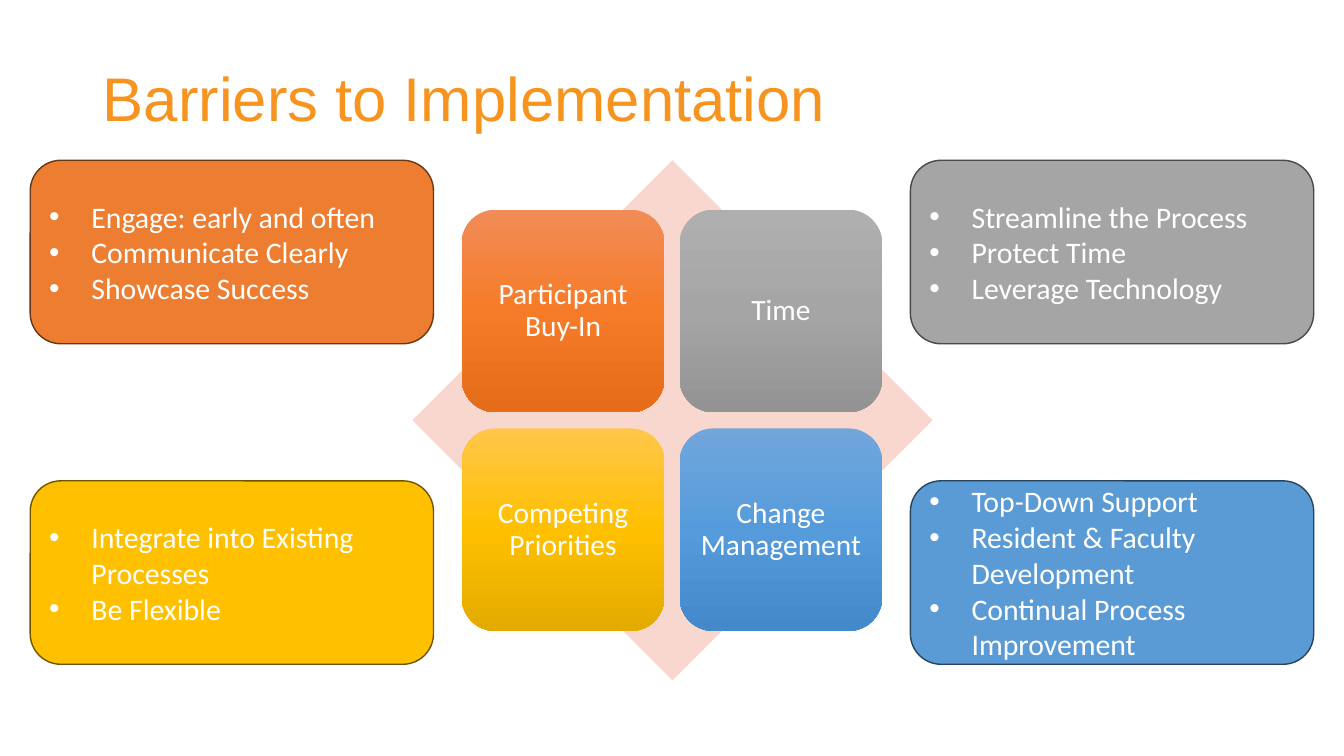
from copy import deepcopy
from dataclasses import dataclass

from lxml.etree import SubElement
from pptx import Presentation
from pptx.dml.color import RGBColor
from pptx.enum.shapes import MSO_SHAPE as Shape
from pptx.enum.text import MSO_ANCHOR as Anchor, PP_ALIGN as Align
from pptx.oxml.ns import qn
from pptx.util import Inches, Pt


@dataclass(frozen=True)
class Theme:
    """Colours, fonts and type sizes of the slide."""
    title: str = "F6941F"
    diamond: str = "F8D7CE"
    text: str = "FFFFFF"
    title_font: str = "Arial"
    body_font: str = "Calibri"
    title_size: float = 44
    tile_size: float = 21
    panel_size: float = 21.3


@dataclass(frozen=True)
class Barrier:
    """One barrier with its remedies and colours."""
    name: str
    remedies: tuple
    gradient: tuple
    fill: str
    line: str


THEME = Theme()
BARRIERS = (
    Barrier("Participant Buy-In",
            ("Engage: early and often", "Communicate Clearly", "Showcase Success"),
            ("F18C57", "F67B28", "E56C19"), "ED7D31", "683715"),
    Barrier("Time",
            ("Streamline the Process", "Protect Time", "Leverage Technology"),
            ("AFAFAF", "A5A5A5", "939393"), "A5A5A5", "484848"),
    Barrier("Competing Priorities",
            ("Integrate into Existing Processes", "Be Flexible"),
            ("FFC64B", "FFC000", "E3AB00"), "FFC000", "705400"),
    Barrier("Change Management",
            ("Top-Down Support", "Resident & Faculty Development",
             "Continual Process Improvement"),
            ("71A6DB", "559BDB", "448ACA"), "5B9BD5", "28445D"),
)


def style_font(para, font, size, color):
    """Set typeface, size and colour of a paragraph."""
    para.font.name = font
    para.font.size = Pt(size)
    para.font.color.rgb = RGBColor.from_string(color)


def add_block(page, kind, left, top, width, height):
    """Add a shape without shadow or outline."""
    block = page.shapes.add_shape(
        kind, Inches(left), Inches(top), Inches(width), Inches(height))
    block.shadow.inherit = False
    block.line.fill.background()
    block.text_frame.word_wrap = True
    block.text_frame.vertical_anchor = Anchor.MIDDLE
    return block


def fill_solid(block, color):
    """Fill a shape with one colour."""
    block.fill.solid()
    block.fill.fore_color.rgb = RGBColor.from_string(color)


def fill_gradient(block, colors):
    """Fill a shape from top to bottom with three evenly spaced colours."""
    block.fill.gradient()
    block.fill.gradient_angle = 270
    first = next(block.element.iter(qn("a:gs")))
    first.addnext(deepcopy(first))
    for index, (stop, color) in enumerate(zip(block.fill.gradient_stops, colors)):
        stop.position = index / 2
        stop.color.rgb = RGBColor.from_string(color)


def add_bullet(para):
    """Give a paragraph a round bullet with a hanging indent."""
    props = para._p.get_or_add_pPr()
    props.set("marL", str(Inches(0.42)))
    props.set("indent", str(Inches(-0.42)))
    SubElement(props, qn("a:buFont"), typeface="Arial")
    SubElement(props, qn("a:buChar"), char="•")


def add_title(page, text):
    """Place and format the slide title."""
    title = page.shapes.title
    title.left, title.top = Inches(0.92), Inches(0.6)
    title.width, title.height = Inches(11.5), Inches(0.81)
    title.text_frame.text = text
    title.text_frame.vertical_anchor = Anchor.MIDDLE
    para = title.text_frame.paragraphs[0]
    para.alignment = Align.LEFT
    para.line_spacing = 0.9
    style_font(para, THEME.title_font, THEME.title_size, THEME.title)


def add_tile(page, barrier, left, top):
    """Add the gradient tile that names a barrier."""
    tile = add_block(page, Shape.ROUNDED_RECTANGLE, left, top, 2.01, 2.01)
    fill_gradient(tile, barrier.gradient)
    frame = tile.text_frame
    frame.margin_left = frame.margin_right = Inches(0.09)
    frame.margin_top = frame.margin_bottom = Inches(0.09)
    frame.text = barrier.name
    para = frame.paragraphs[0]
    para.alignment = Align.CENTER
    para.line_spacing = 0.9
    style_font(para, THEME.body_font, THEME.tile_size, THEME.text)


def add_panel(page, barrier, left, top):
    """Add the panel that lists the remedies for a barrier."""
    panel = add_block(page, Shape.ROUNDED_RECTANGLE, left, top, 4, 1.82)
    fill_solid(panel, barrier.fill)
    panel.line.color.rgb = RGBColor.from_string(barrier.line)
    panel.line.width = Pt(1)
    panel.text_frame.text = "\n".join(barrier.remedies)
    for para in panel.text_frame.paragraphs:
        para.alignment = Align.LEFT
        add_bullet(para)
        style_font(para, THEME.body_font, THEME.panel_size, THEME.text)


def main():
    """Build the slide and save the deck."""
    deck = Presentation()
    deck.slide_width, deck.slide_height = Inches(13.33), Inches(7.5)
    page = deck.slides.add_slide(deck.slide_layouts[5])
    add_title(page, "Barriers to Implementation")
    diamond = add_block(page, Shape.DIAMOND, 4.09, 1.59, 5.16, 5.16)
    fill_solid(diamond, THEME.diamond)
    for index, barrier in enumerate(BARRIERS):
        row, column = divmod(index, 2)
        add_tile(page, barrier, 4.58 + 2.16 * column, 2.08 + 2.17 * row)
        add_panel(page, barrier, 0.3 + 8.73 * column, 1.59 + 3.18 * row)
    deck.save("out.pptx")


if __name__ == "__main__":
    main()
